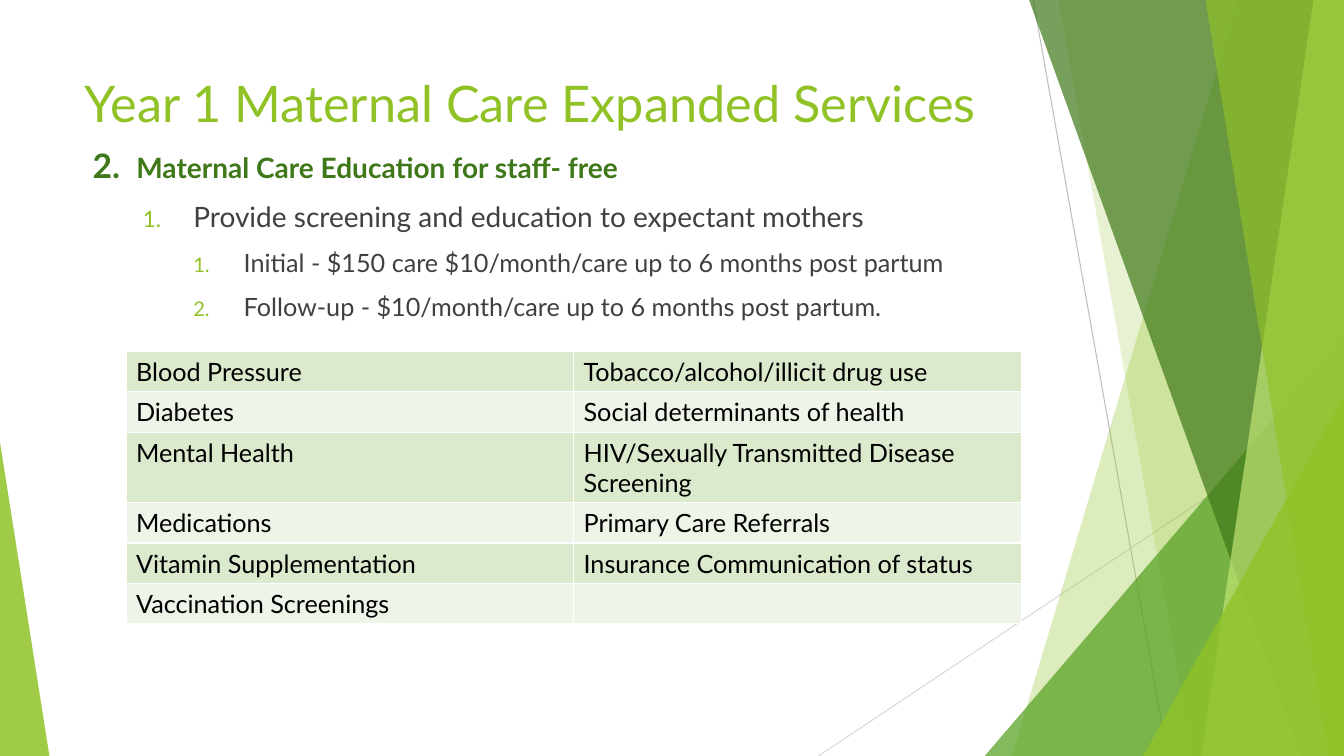
import pptx
import pptx.util
import pptx.dml.color
import pptx.enum.shapes
import pptx.enum.text
import pptx.oxml
import pptx.oxml.ns
import lxml.etree

Pt = pptx.util.Pt
WIDTH, HEIGHT = 960, 540
FONT = "Lato"
LIME, LEAF, FOREST, PALE = "90C226", "54A021", "3F7819", "C0E474"
GREY, BLACK, WHITE = "404040", "000000", "FFFFFF"

# Content
TITLE = "Year 1 Maternal Care Expanded Services"
OUTLINE = [  # level, left margin, hanging indent, runs of text with size
    (0, 36, 0, [("2.  ", 24), ("Maternal Care Education for staff- free", 20)]),
    (1, 108, 36, [("Provide screening and education to expectant mothers", 20)]),
    (2, 144, 36, [("Initial - $150 care $10/month/care up to 6 months post partum", 18)]),
    (2, 144, 36, [("Follow-up - $10/month/care up to 6 months post partum.", 18)]),
]
SCREENINGS = [
    ("Blood Pressure", "Tobacco/alcohol/illicit drug use"),
    ("Diabetes", "Social determinants of health"),
    ("Mental Health", "HIV/Sexually Transmitted Disease Screening"),
    ("Medications", "Primary Care Referrals"),
    ("Vitamin Supplementation", "Insurance Communication of status"),
    ("Vaccination Screenings", ""),
]
ROW_HEIGHTS = [28.8, 28.8, 50.4, 28.8, 28.8, 28.8]
BAND_FILLS = ["DBE9CD", "EEF4E8"]

# Decoration, back to front
LINES = [((738, 0), (834, 540), "BFBFBF"), ((960, 290), (584.6, 540), "D9D9D9")]
SHARDS = [  # ("band", top x, bottom x) reaches the right edge; ("triangle", box, apex)
    ("band", (884.2, 722.9), LIME, 30),
    ("band", (756, 851.8), LIME, 20),
    ("triangle", (703.4, 240, 256.6, 300, 1), LEAF, 72),
    ("band", (735.1, 929.5), FOREST, 70),
    ("band", (938.2, 858.2), PALE, 70),
    ("band", (861.1, 949), LIME, 65),
    ("triangle", (816.5, 283, 143.5, 257, 1), LIME, 80),
    ("triangle", (0, 316, 35.3, 224, 0), LIME, 85),
]


def colour(code):
    return pptx.dml.color.RGBColor.from_string(code)


def add_child(parent, tag, **values):
    child = lxml.etree.SubElement(parent, pptx.oxml.ns.qn(tag))
    for name, value in values.items():
        child.set(name, str(value))
    return child


def add_span(para, text, size, code, bold=False):
    span = para.add_run()
    span.text = text
    look = {"name": FONT, "size": Pt(size), "bold": bold}
    for name, value in look.items():
        setattr(span.font, name, value)
    span.font.color.rgb = colour(code)


def add_line(page, start, end, code):
    line = page.shapes.add_connector(
        pptx.enum.shapes.MSO_CONNECTOR.STRAIGHT, *map(Pt, start + end))
    line.line.color.rgb = colour(code)
    line.line.width = Pt(0.75)
    add_child(line._element.spPr, "a:effectLst")


def add_shard(page, kind, geometry, code, opacity):
    if kind == "band":
        top, bottom = geometry
        builder = page.shapes.build_freeform(Pt(top), 0)
        corners = [(WIDTH, 0), (WIDTH, HEIGHT), (bottom, HEIGHT)]
        builder.add_line_segments([(Pt(x), Pt(y)) for x, y in corners])
        shard = builder.convert_to_shape()
    else:
        *frame, apex = geometry
        shard = page.shapes.add_shape(
            pptx.enum.shapes.MSO_SHAPE.ISOSCELES_TRIANGLE, *map(Pt, frame))
        shard.adjustments[0] = apex
    shard.shadow.inherit = False
    shard.line.fill.background()
    shard.fill.solid()
    shard.fill.fore_color.rgb = colour(code)
    tint = shard._element.spPr.find(".//" + pptx.oxml.ns.qn("a:srgbClr"))
    add_child(tint, "a:alpha", val=opacity * 1000)


def place_title(page):
    title = page.shapes.title
    place = {"left": 53.3, "top": 48.2, "width": 906.5, "height": 103.7}
    for name, value in place.items():
        setattr(title, name, Pt(value))
    frame = title.text_frame
    layout = {"word_wrap": True, "auto_size": pptx.enum.text.MSO_AUTO_SIZE.NONE,
              "vertical_anchor": pptx.enum.text.MSO_ANCHOR.TOP}
    for name, value in layout.items():
        setattr(frame, name, value)
    para = frame.paragraphs[0]
    para.alignment = pptx.enum.text.PP_ALIGN.LEFT
    add_span(para, TITLE, 36, LIME)
    page.shapes._spTree.append(title._element)  # in front of the decoration


def add_outline(page):
    box = page.shapes.add_textbox(Pt(23), Pt(100), Pt(816), Pt(352))
    frame = box.text_frame
    frame.word_wrap = True
    for index, (level, margin, hanging, spans) in enumerate(OUTLINE):
        para = frame.add_paragraph() if index else frame.paragraphs[0]
        para.level = level
        if index:
            para.space_before = Pt(10)
        properties = para._p.get_or_add_pPr()
        properties.set("marL", str(Pt(margin)))
        properties.set("indent", str(-Pt(hanging)))
        if level:
            add_child(add_child(properties, "a:buClr"), "a:srgbClr", val=LIME)
            add_child(properties, "a:buSzPct", val=80000)
            add_child(properties, "a:buFont", typeface=FONT)
            add_child(properties, "a:buAutoNum", type="arabicPeriod")
        for text, size in spans:
            add_span(para, text, size, GREY if level else FOREST, bold=level == 0)


def add_screenings(page):
    table = page.shapes.add_table(
        len(SCREENINGS), 2, Pt(90), Pt(251), Pt(639.4), Pt(sum(ROW_HEIGHTS))).table
    table.first_row = table.horz_banding = False
    for row, (height, texts) in enumerate(zip(ROW_HEIGHTS, SCREENINGS)):
        table.rows[row].height = Pt(height)
        for column, text in enumerate(texts):
            cell = table.cell(row, column)
            properties = cell._tc.get_or_add_tcPr()
            for side in ("a:lnL", "a:lnR", "a:lnT", "a:lnB"):
                border = add_child(properties, side, w=Pt(1))
                add_child(add_child(border, "a:solidFill"), "a:srgbClr", val=WHITE)
            cell.fill.solid()
            cell.fill.fore_color.rgb = colour(BAND_FILLS[row % 2])
            if text:
                add_span(cell.text_frame.paragraphs[0], text, 18, BLACK)


def main():
    deck = pptx.Presentation()
    deck.slide_width, deck.slide_height = Pt(WIDTH), Pt(HEIGHT)
    page = deck.slides.add_slide(deck.slide_layouts.get_by_name("Title Only"))
    for line in LINES:
        add_line(page, *line)
    for shard in SHARDS:
        add_shard(page, *shard)
    place_title(page)
    add_outline(page)
    add_screenings(page)
    deck.save("out.pptx")


if __name__ == "__main__":
    main()
